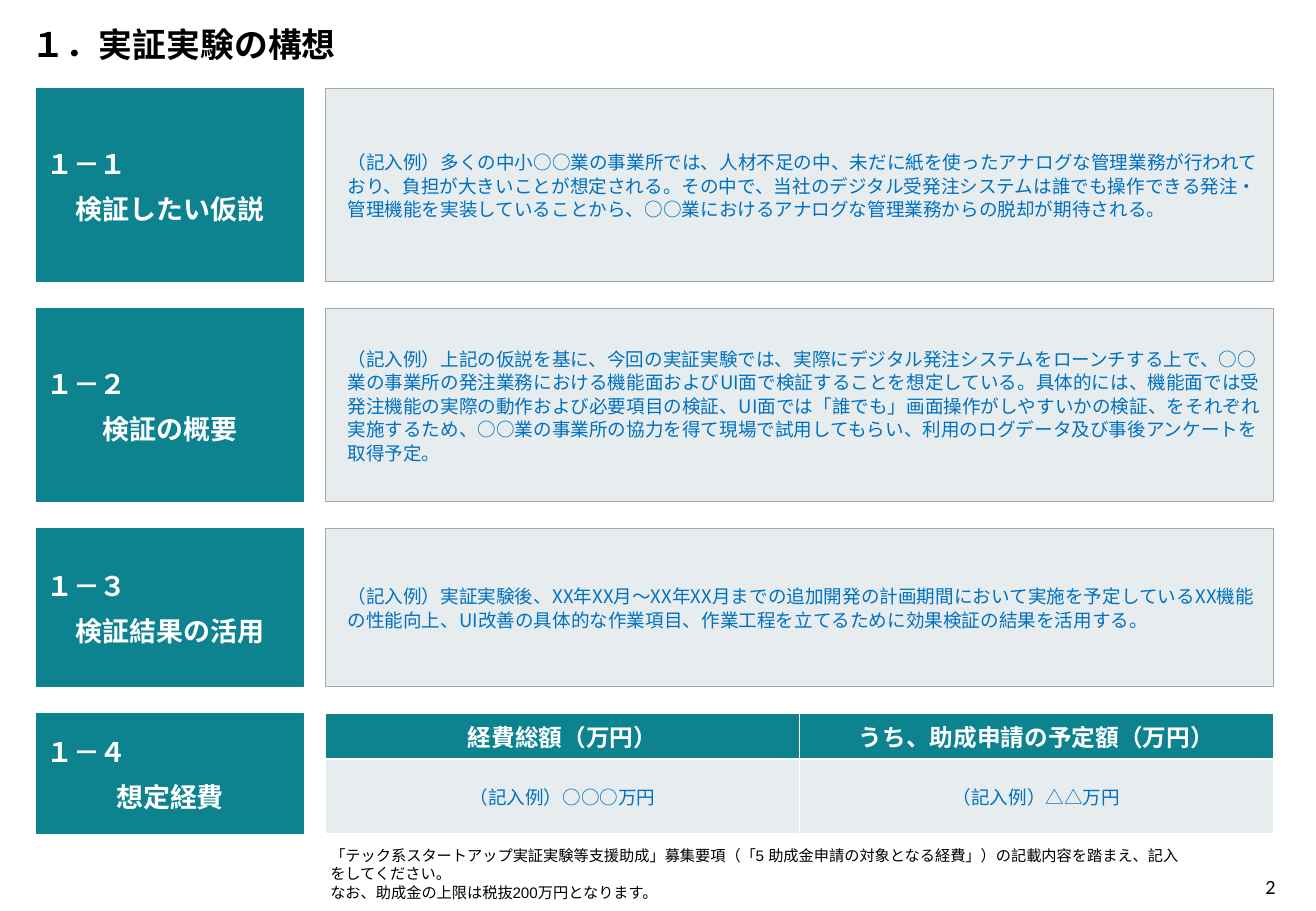
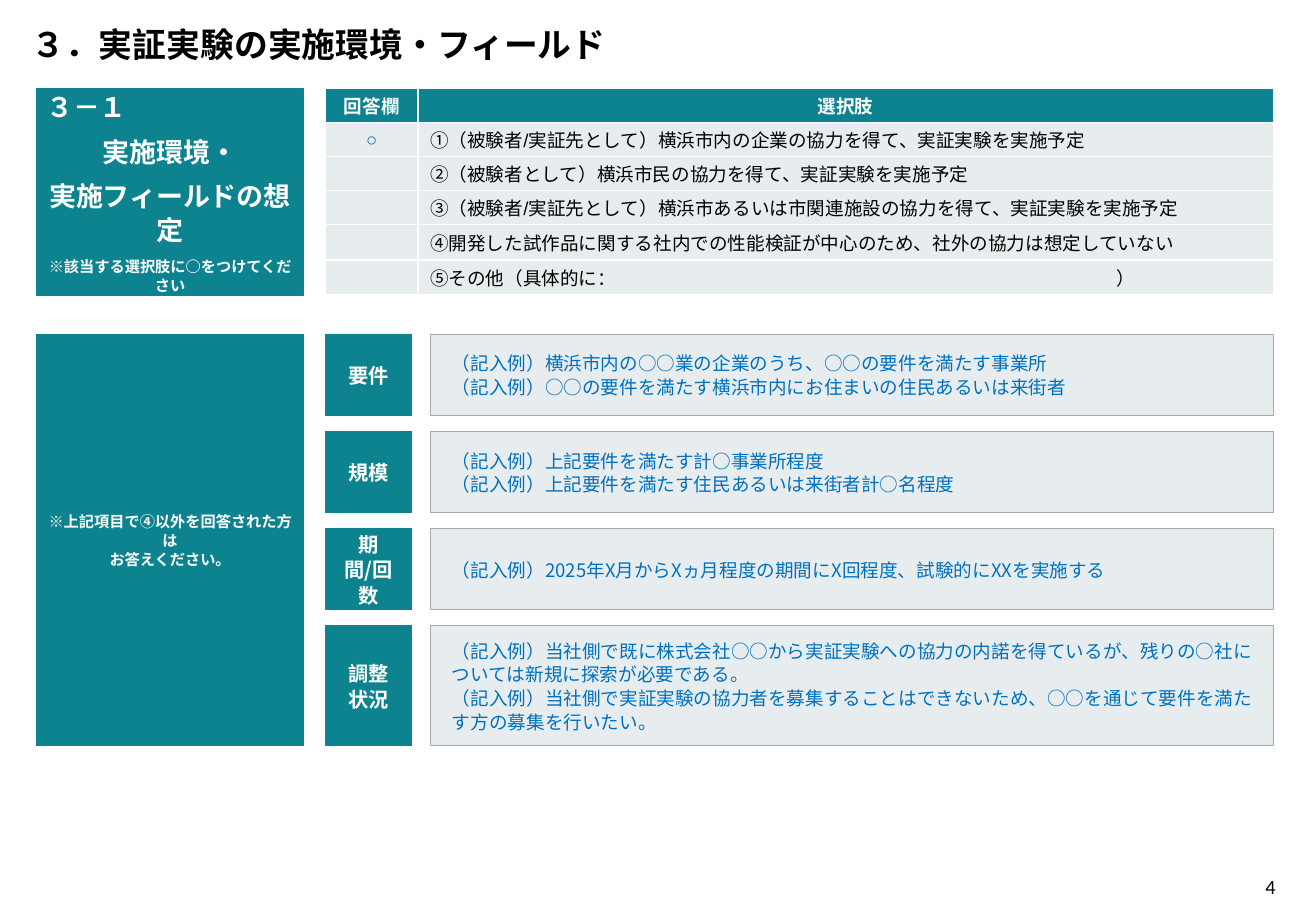
"""Builds two form slides on the plan and the setting of a field trial."""
from lxml.etree import SubElement
from pptx import Presentation
from pptx.dml.color import RGBColor
from pptx.enum.shapes import MSO_SHAPE
from pptx.enum.text import MSO_ANCHOR, PP_ALIGN
from pptx.oxml.ns import qn
from pptx.util import Pt

PX = 9144
NOTO = "Noto Sans CJK JP"
HUES = {"teal": "0D8390", "pale": "E7EDEE", "edge": "A7A8AA",
        "blue": "0070C0", "white": "FFFFFF", "black": "000000"}
HUES = {name: RGBColor.from_string(code) for name, code in HUES.items()}
LEFT, SIDE = 30, 220
MAIN, WIDE = 268, 780
TOP = 73


def write(frame, rows, size, ink, bold=False, align=PP_ALIGN.LEFT, face=NOTO):
    frame.word_wrap = True
    for i, row in enumerate(rows):
        para = frame.paragraphs[0] if i == 0 else frame.add_paragraph()
        para.text = row
        para.alignment = align
        for run in para.runs:
            run.font.size = Pt(size)
            run.font.bold = bold
            run.font.color.rgb = HUES[ink]
            run.font.name = face
            SubElement(run._r.get_or_add_rPr(), qn("a:ea"), typeface=NOTO)
        for gap in para._p.findall(qn("a:br")):
            SubElement(gap, qn("a:rPr"), sz=str(size * 100))
        if not row:
            SubElement(para._p, qn("a:endParaRPr"), sz=str(size * 100))


def box(slide, x, y, w, h, rows, size=11, dark=False):
    shape = slide.shapes.add_shape(MSO_SHAPE.RECTANGLE, x * PX, y * PX, w * PX, h * PX)
    shape.shadow.inherit = False
    shape.fill.solid()
    shape.fill.fore_color.rgb = HUES["teal" if dark else "pale"]
    shape.line.color.rgb = HUES["teal" if dark else "edge"]
    shape.line.width = Pt(0.5)
    frame = shape.text_frame
    frame.vertical_anchor = MSO_ANCHOR.MIDDLE
    frame.margin_left = frame.margin_right = 8 * PX
    frame.margin_top = frame.margin_bottom = 8 * PX
    if dark:
        write(frame, rows, size, "white", True, PP_ALIGN.CENTER)
    else:
        write(frame, rows, size, "blue")
    for i, para in enumerate(frame.paragraphs):
        para.line_spacing = 1.06
        if dark and i:
            para.space_before = Pt(6)
        if not dark:
            para._p.get_or_add_pPr().set("marL", str(10 * PX))
    return frame


deck = Presentation()
deck.slide_width, deck.slide_height = 1083 * PX, 750 * PX
pages = []
for title, num in (("１．実証実験の構想", "2"), ("３．実証実験の実施環境・フィールド", "4")):
    slide = deck.slides.add_slide(deck.slide_layouts[6])
    pages.append(slide)
    head = slide.shapes.add_textbox(16 * PX, 14 * PX, 992 * PX, 45 * PX).text_frame
    head.vertical_anchor = MSO_ANCHOR.MIDDLE
    write(head, [title], 20, "black", True)
    foot = slide.shapes.add_textbox(1019 * PX, 720 * PX, 53 * PX, 20 * PX).text_frame
    foot.margin_left = foot.margin_right = foot.margin_top = foot.margin_bottom = 0
    write(foot, [num], 12, "black", align=PP_ALIGN.CENTER, face="Calibri")
plan, field = pages

parts = [
    (159, "１－１", "検証したい仮説",
     "（記入例）多くの中小○○業の事業所では、人材不足の中、未だに紙を使ったアナログな管理業務が行われており、"
     "負担が大きいことが想定される。その中で、当社のデジタル受発注システムは誰でも操作できる発注・管理機能を"
     "実装していることから、○○業におけるアナログな管理業務からの脱却が期待される。"),
    (159, "１－２", "検証の概要",
     "（記入例）上記の仮説を基に、今回の実証実験では、実際にデジタル発注システムをローンチする上で、○○業の事業所の"
     "発注業務における機能面およびUI面で検証することを想定している。具体的には、機能面では受発注機能の実際の動作および"
     "必要項目の検証、UI面では「誰でも」画面操作がしやすいかの検証、をそれぞれ実施するため、○○業の事業所の協力を得て"
     "現場で試用してもらい、利用のログデータ及び事後アンケートを取得予定。"),
    (130, "１－３", "検証結果の活用",
     "（記入例）実証実験後、XX年XX月～XX年XX月までの追加開発の計画期間において実施を予定しているXX機能の性能向上、"
     "UI改善の具体的な作業項目、作業工程を立てるために効果検証の結果を活用する。"),
    (99, "１－４", "想定経費", None),
]
y = TOP
for high, code, name, body in parts:
    frame = box(plan, LEFT, y, SIDE, high, [code, name], 16, True)
    frame.paragraphs[0].alignment = PP_ALIGN.LEFT
    if body:
        box(plan, MAIN, y, WIDE, high, [body])
    y += high + 22

note = plan.shapes.add_textbox(262 * PX, 692 * PX, 720 * PX, 40 * PX).text_frame
write(note, ["「テック系スタートアップ実証実験等支援助成」募集要項（「5 助成金申請の対象となる経費」）の記載内容を踏まえ、"
             "記入をしてください。",
             "なお、助成金の上限は税抜200万円となります。"], 9, "black", face="Arial")

frame = box(field, LEFT, TOP, SIDE, 170,
            ["３－１", "実施環境・", "実施フィールドの想定", "※該当する選択肢に○をつけてください"], 16, True)
frame.paragraphs[0].alignment = PP_ALIGN.LEFT
frame.paragraphs[3].runs[0].font.size = Pt(9)
box(field, LEFT, 275, SIDE, 339, ["※上記項目で④以外を回答された方は\nお答えください。"], 9, True)

asks = [
    (67, "要件", ["（記入例）横浜市内の○○業の企業のうち、○○の要件を満たす事業所",
                "（記入例）○○の要件を満たす横浜市内にお住まいの住民あるいは来街者"]),
    (67, "規模", ["（記入例）上記要件を満たす計○事業所程度",
                "（記入例）上記要件を満たす住民あるいは来街者計○名程度"]),
    (67, "期間/回数", ["（記入例）2025年X月からXヵ月程度の期間にX回程度、試験的にXXを実施する"]),
    (99, "調整\n状況", ["（記入例）当社側で既に株式会社○○から実証実験への協力の内諾を得ているが、"
                    "残りの○社については新規に探索が必要である。",
                    "（記入例）当社側で実証実験の協力者を募集することはできないため、"
                    "○○を通じて要件を満たす方の募集を行いたい。"]),
]
y = 275
for high, name, body in asks:
    box(field, MAIN, y, 71, high, [name], 12, True)
    box(field, 354, y, 694, high, body)
    y += high + 13

costs = [["経費総額（万円）", "うち、助成申請の予定額（万円）"],
         ["（記入例）○○○万円", "（記入例）△△万円"]]
picks = [["回答欄", "選択肢"],
         ["○", "①（被験者/実証先として）横浜市内の企業の協力を得て、実証実験を実施予定"],
         ["", "②（被験者として）横浜市民の協力を得て、実証実験を実施予定"],
         ["", "③（被験者/実証先として）横浜市あるいは市関連施設の協力を得て、実証実験を実施予定"],
         ["", "④開発した試作品に関する社内での性能検証が中心のため、社外の協力は想定していない"],
         ["", "⑤その他（具体的に：\t）"]]
grids = [(plan, 587, [390, 390], [38, 61], costs, 14),
         (field, TOP, [76, 704], [28, 28, 28, 28, 29, 29], picks, 11)]
for slide, y, wides, highs, rows, size in grids:
    table = slide.shapes.add_table(len(rows), 2, MAIN * PX, y * PX,
                                   WIDE * PX, sum(highs) * PX).table
    table.horz_banding = False
    for col, wide in zip(table.columns, wides):
        col.width = wide * PX
    for r, row in enumerate(rows):
        table.rows[r].height = highs[r] * PX
        for c, text in enumerate(row):
            cell = table.cell(r, c)
            cell.fill.solid()
            cell.fill.fore_color.rgb = HUES["pale" if r else "teal"]
            cell.vertical_anchor = MSO_ANCHOR.MIDDLE
            cell.margin_top = cell.margin_bottom = 2 * PX
            pick = rows is picks and r > 0 and c == 1
            ink = "white" if r == 0 else "black" if pick else "blue"
            face = NOTO if rows is costs and r else "Arial"
            write(cell.text_frame, [text], size if r == 0 else 11, ink, r == 0,
                  PP_ALIGN.LEFT if pick else PP_ALIGN.CENTER, face)
            if "\t" in text:
                tabs = SubElement(cell.text_frame.paragraphs[0]._p.get_or_add_pPr(), qn("a:tabLst"))
                SubElement(tabs, qn("a:tab"), pos=str(565 * PX), algn="l")

deck.save("out.pptx")
